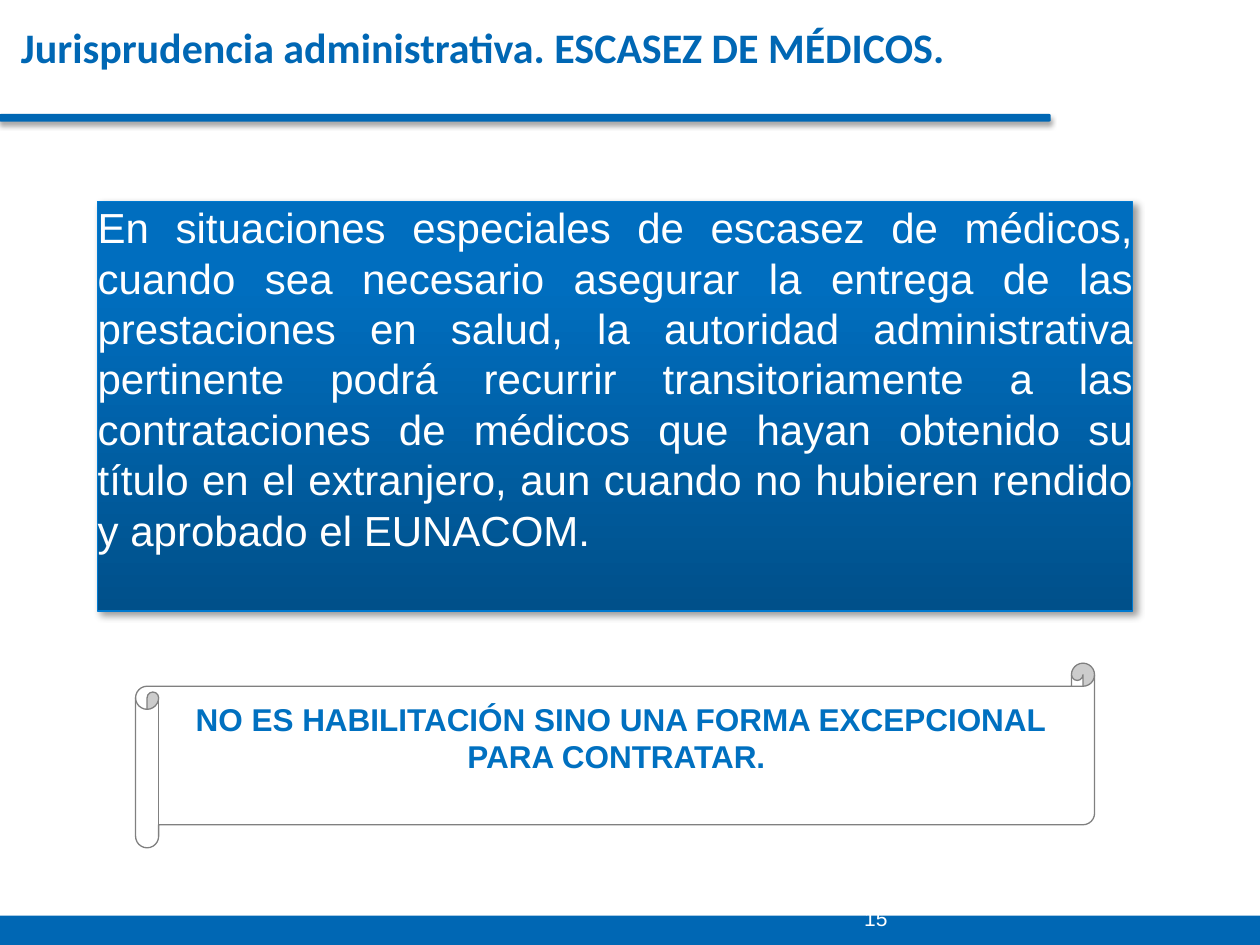
"""Build a slide on hiring doctors during shortages."""
from lxml.etree import SubElement
from pptx import Presentation
from pptx.dml.color import RGBColor
from pptx.enum.shapes import MSO_SHAPE
from pptx.enum.text import MSO_ANCHOR, PP_ALIGN
from pptx.oxml.ns import qn
from pptx.util import Pt

TITLE = "Jurisprudencia administrativa. ESCASEZ DE MÉDICOS."
STATEMENT = (
    "En situaciones especiales de escasez de médicos, cuando sea necesario asegurar "
    "la entrega de las prestaciones en salud, la autoridad administrativa pertinente "
    "podrá recurrir transitoriamente a las contrataciones de médicos que hayan obtenido "
    "su título en el extranjero, aun cuando no hubieren rendido y aprobado el EUNACOM."
)
CONCLUSION = "NO ES HABILITACIÓN SINO UNA FORMA EXCEPCIONAL PARA CONTRATAR. "
PAGE_NUMBER = "15"

BLUE = "0067B4"
WHITE = "FFFFFF"
GRADIENT = [("006EBF", 0.2), ("00508A", 1)]


def color(value):
    return RGBColor.from_string(value)


def add_panel(slide, kind, box, fill=None, line=None):
    shape = slide.shapes.add_shape(kind, *map(Pt, box))
    shape.shadow.inherit = False
    if fill:
        shape.fill.solid()
        shape.fill.fore_color.rgb = color(fill)
    if line:
        shape.line.color.rgb = color(line)
        shape.line.width = Pt(0.75)
    else:
        shape.line.fill.background()
    return shape


def add_shadow(shape, opacity, blur, distance, angle):
    effects = shape._element.spPr.find(qn("a:effectLst"))
    shadow = SubElement(effects, qn("a:outerShdw"), blurRad=str(Pt(blur)),
                        dist=str(Pt(distance)), dir=str(angle * 60000),
                        algn="ctr", rotWithShape="0")
    tint = SubElement(shadow, qn("a:srgbClr"), val="000000")
    SubElement(tint, qn("a:alpha"), val=str(opacity * 1000))


def write(shape, text, size, ink, font="Arial", bold=False, align=PP_ALIGN.LEFT,
          anchor=MSO_ANCHOR.TOP, insets=(0, 0, 0, 0)):
    frame = shape.text_frame
    frame.word_wrap = True
    frame.vertical_anchor = anchor
    (frame.margin_left, frame.margin_top,
     frame.margin_right, frame.margin_bottom) = map(Pt, insets)
    paragraph = frame.paragraphs[0]
    paragraph.alignment = align
    run = paragraph.add_run()
    run.text = text
    run.font.name = font
    run.font.size = Pt(size)
    run.font.bold = bold
    run.font.color.rgb = color(ink)
    return paragraph


def main():
    presentation = Presentation()
    presentation.slide_width, presentation.slide_height = Pt(720), Pt(540)
    slide = presentation.slides.add_slide(presentation.slide_layouts[6])

    rule = add_panel(slide, MSO_SHAPE.ROUNDED_RECTANGLE, (0, 65.5, 600, 3.6), BLUE, BLUE)
    rule.adjustments[0] = 0.12
    add_shadow(rule, 35, 3.1, 1.8, 90)
    add_panel(slide, MSO_SHAPE.RECTANGLE, (0, 523.2, 720, 16.8), BLUE)

    title = slide.shapes.add_textbox(Pt(12), Pt(12.5), Pt(643), Pt(29))
    write(title, TITLE, 24, BLUE, font="Calibri", bold=True)

    statement = add_panel(slide, MSO_SHAPE.RECTANGLE, (55.8, 115.2, 591.5, 234), line="0079D0")
    statement.fill.gradient()
    statement.fill.gradient_angle = 270
    for stop, (value, position) in zip(statement.fill.gradient_stops, GRADIENT):
        stop.color.rgb = color(value)
        stop.position = position
    add_shadow(statement, 40, 4, 3, 45)
    paragraph = write(statement, STATEMENT, 24, WHITE, align=PP_ALIGN.JUSTIFY)
    paragraph.line_spacing = Pt(28.8)

    number = slide.shapes.add_textbox(Pt(486.7), Pt(514), Pt(168), Pt(15))
    write(number, PAGE_NUMBER, 12, WHITE, insets=(7.2, 3.6, 7.2, 3.6))

    scroll = add_panel(slide, MSO_SHAPE.HORIZONTAL_SCROLL, (77.5, 379, 548, 105.5), WHITE, "808080")
    write(scroll, CONCLUSION, 18, "0070C0", bold=True, align=PP_ALIGN.CENTER,
          anchor=MSO_ANCHOR.MIDDLE, insets=(7.2, 3.6, 7.2, 24.3))

    presentation.save("out.pptx")


if __name__ == "__main__":
    main()
